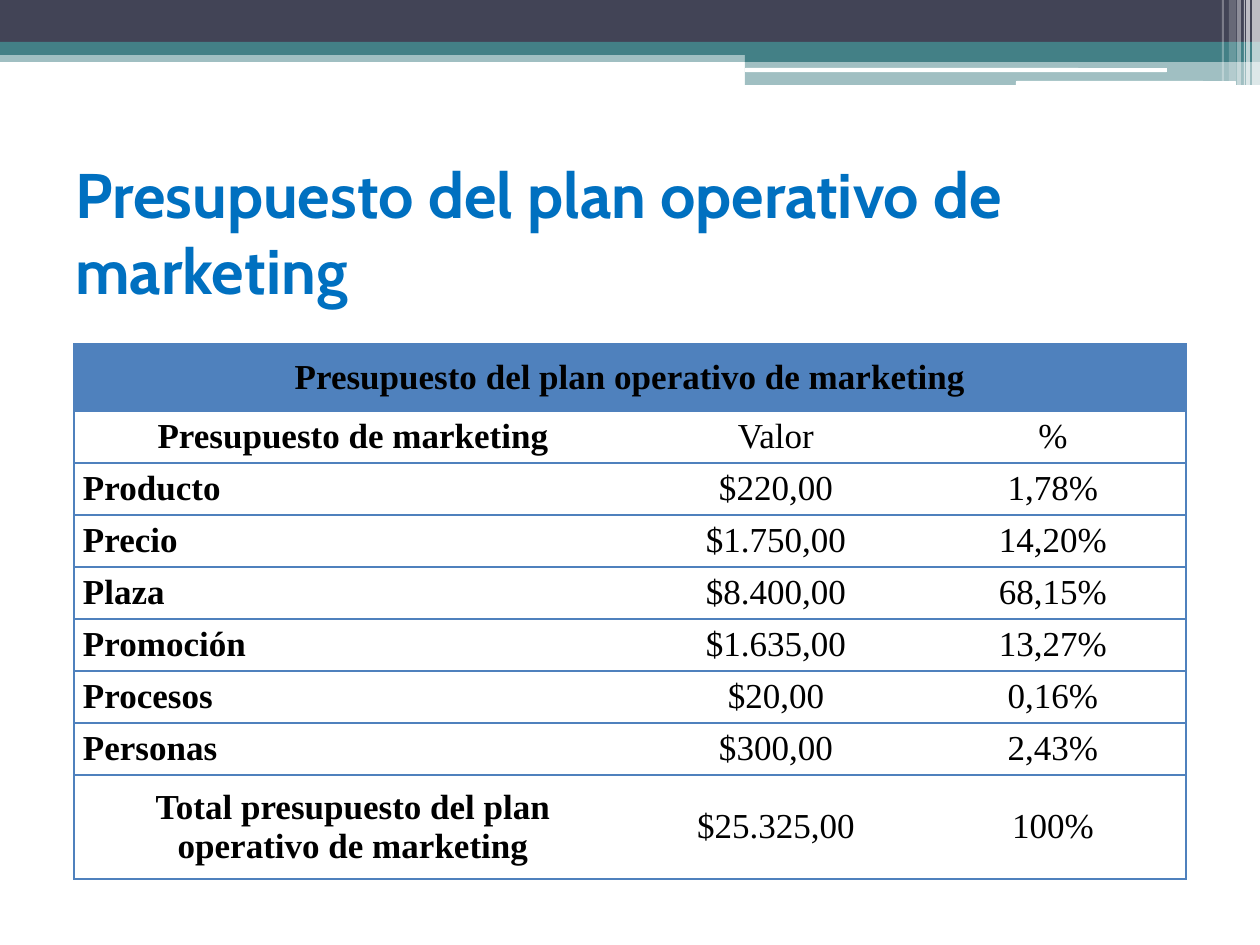
from lxml import etree
from pptx import Presentation
from pptx import util as u
from pptx.dml.color import RGBColor
from pptx.enum import shapes, text
from pptx.oxml.ns import qn

COLORS = {"teal": "438086", "navy": "424456", "white": "FFFFFF",
          "title": "0070C0", "table": "4F81BD", "black": "000000"}
TITLE = "Presupuesto del plan operativo de marketing"
ROWS = [
    (TITLE, "", ""),
    ("Presupuesto de marketing", "Valor", "%"),
    ("Producto", "$220,00", "1,78%"),
    ("Precio", "$1.750,00", "14,20%"),
    ("Plaza", "$8.400,00", "68,15%"),
    ("Promoción", "$1.635,00", "13,27%"),
    ("Procesos", "$20,00", "0,16%"),
    ("Personas", "$300,00", "2,43%"),
    ("Total presupuesto del plan operativo de marketing", "$25.325,00", "100%"),
]
COLUMN_WIDTHS = [558, 288, 266]
ROW_HEIGHTS = [67] + [52] * 7 + [104]
TABLE_LEFT, TABLE_TOP = 74, 344
CENTERED_LABELS = (0, 1, len(ROWS) - 1)

BANDS = [
    (0, 50, 1260, 12, "teal", 50),
    (0, 0, 1260, 42, "navy", 100),
    (0, 42, 1260, 13, "teal", 100),
    (745, 49, 515, 13, "teal", 100),
    (745, 61, 515, 24, "teal", 50),
]
WHITE_BARS = [(745, 68, 422, 4), (1016, 81, 220, 5)]
STRIPES = [(1252, 8, 85, 65), (1246, 4, 85, 65), (1244, 1, 85, 60),
           (1237, 4, 85, 40), (1229, 7, 81, 20), (1222, 2, 81, 30)]


def px(value):
    return u.Emu(round(value * 914400 / 126))


def rgb(name):
    return RGBColor.from_string(COLORS[name])


def add_block(slide, kind, left, top, width, height, color, opacity=100):
    shape = slide.shapes.add_shape(kind, px(left), px(top), px(width), px(height))
    shape.shadow.inherit = False
    shape.line.fill.background()
    shape.fill.solid()
    shape.fill.fore_color.rgb = rgb(color)
    if opacity < 100:
        srgb = shape.fill._xPr.find(".//" + qn("a:srgbClr"))
        etree.SubElement(srgb, qn("a:alpha"), val=str(opacity * 1000))


def format_text(paragraph, size, font, color, bold):
    for run in paragraph.runs:
        run.font.size = u.Pt(size)
        run.font.name = font
        run.font.bold = bold
        run.font.color.rgb = rgb(color)


def set_borders(cell, visible):
    properties = cell._tc.get_or_add_tcPr()
    for side in "LRTB":
        line = etree.SubElement(properties, qn("a:ln" + side), w=str(u.Pt(1)))
        if side in visible:
            fill = etree.SubElement(line, qn("a:solidFill"))
            etree.SubElement(fill, qn("a:srgbClr"), val=COLORS["table"])
        else:
            etree.SubElement(line, qn("a:noFill"))


def add_decoration(slide):
    for band in BANDS:
        add_block(slide, shapes.MSO_SHAPE.RECTANGLE, *band)
    for bar in WHITE_BARS:
        add_block(slide, shapes.MSO_SHAPE.ROUNDED_RECTANGLE, *bar, "white")
    for left, width, height, opacity in STRIPES:
        add_block(slide, shapes.MSO_SHAPE.RECTANGLE, left, 0, width, height, "white", opacity)


def add_title(slide):
    frame = slide.shapes.add_textbox(px(63), px(158), px(1134), px(147)).text_frame
    frame.word_wrap = True
    frame.vertical_anchor = text.MSO_ANCHOR.MIDDLE
    frame.text = TITLE
    format_text(frame.paragraphs[0], 36, "Cabin", "title", True)


def add_budget_table(slide):
    table = slide.shapes.add_table(
        len(ROWS), len(COLUMN_WIDTHS), px(TABLE_LEFT), px(TABLE_TOP),
        px(sum(COLUMN_WIDTHS)), px(sum(ROW_HEIGHTS))).table
    table.first_row = table.horz_banding = False
    for column, width in zip(table.columns, COLUMN_WIDTHS):
        column.width = px(width)
    for row, height in zip(table.rows, ROW_HEIGHTS):
        row.height = px(height)
    table.cell(0, 0).merge(table.cell(0, len(COLUMN_WIDTHS) - 1))

    for row, values in enumerate(ROWS):
        for column, value in enumerate(values):
            cell = table.cell(row, column)
            set_borders(cell, "LRTB" if row == 0 else ("LTB", "TB", "RTB")[column])
            if row == 0:
                cell.fill.solid()
                cell.fill.fore_color.rgb = rgb("table")
            else:
                cell.fill.background()
            if cell.is_spanned:
                continue
            cell.margin_left = cell.margin_right = px(9)
            cell.margin_top = cell.margin_bottom = 0
            cell.vertical_anchor = text.MSO_ANCHOR.MIDDLE
            cell.text_frame.text = value
            paragraph = cell.text_frame.paragraphs[0]
            centered = column > 0 or row in CENTERED_LABELS
            paragraph.alignment = text.PP_ALIGN.CENTER if centered else text.PP_ALIGN.LEFT
            format_text(paragraph, 20, "Times New Roman", "black", column == 0)


def main():
    presentation = Presentation()
    presentation.slide_width, presentation.slide_height = px(1260), px(945)
    slide = presentation.slides.add_slide(presentation.slide_layouts[6])
    add_decoration(slide)
    add_title(slide)
    add_budget_table(slide)
    presentation.save("out.pptx")


if __name__ == "__main__":
    main()
